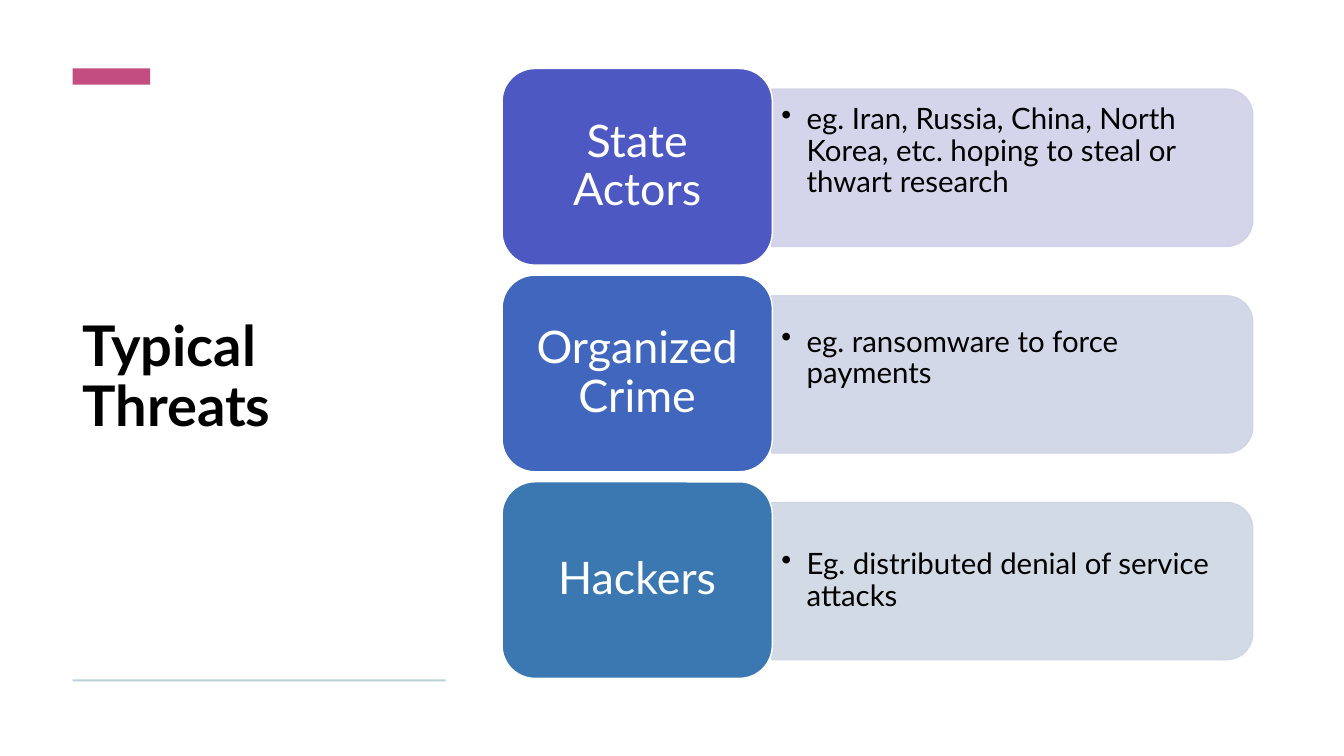
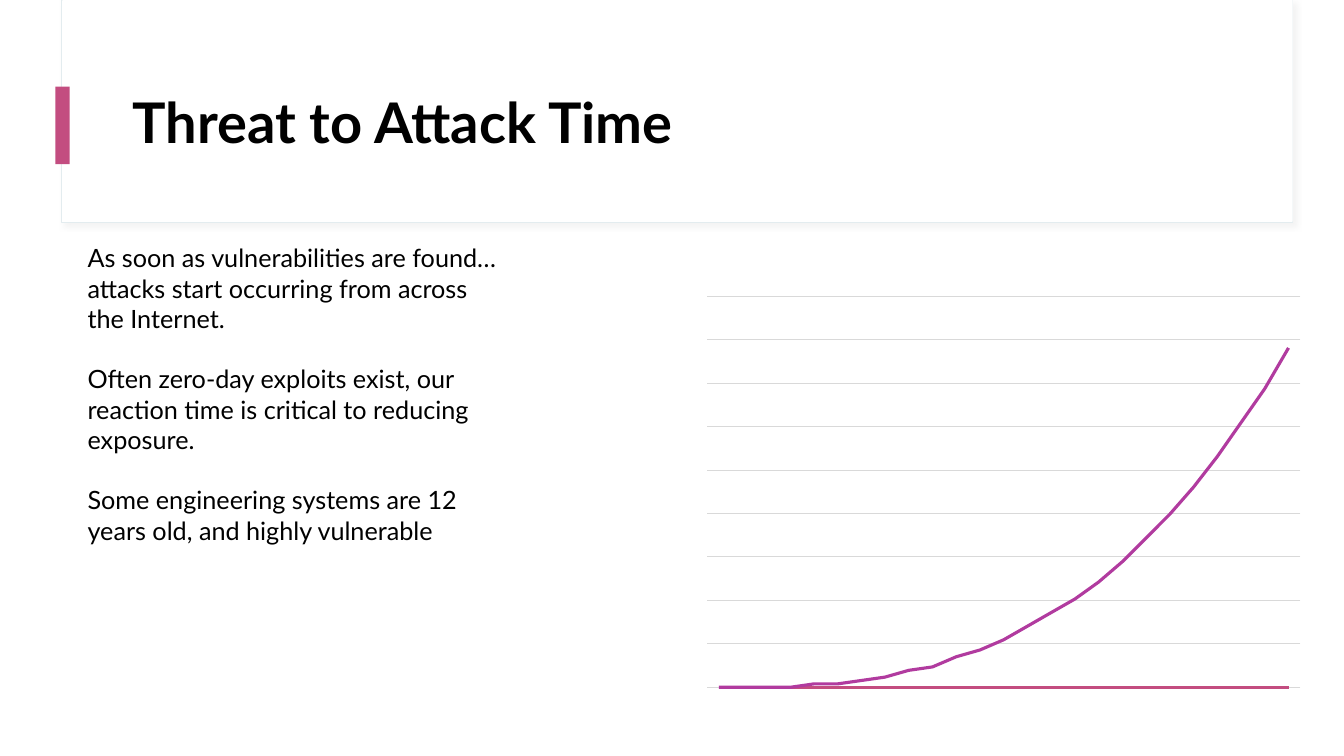
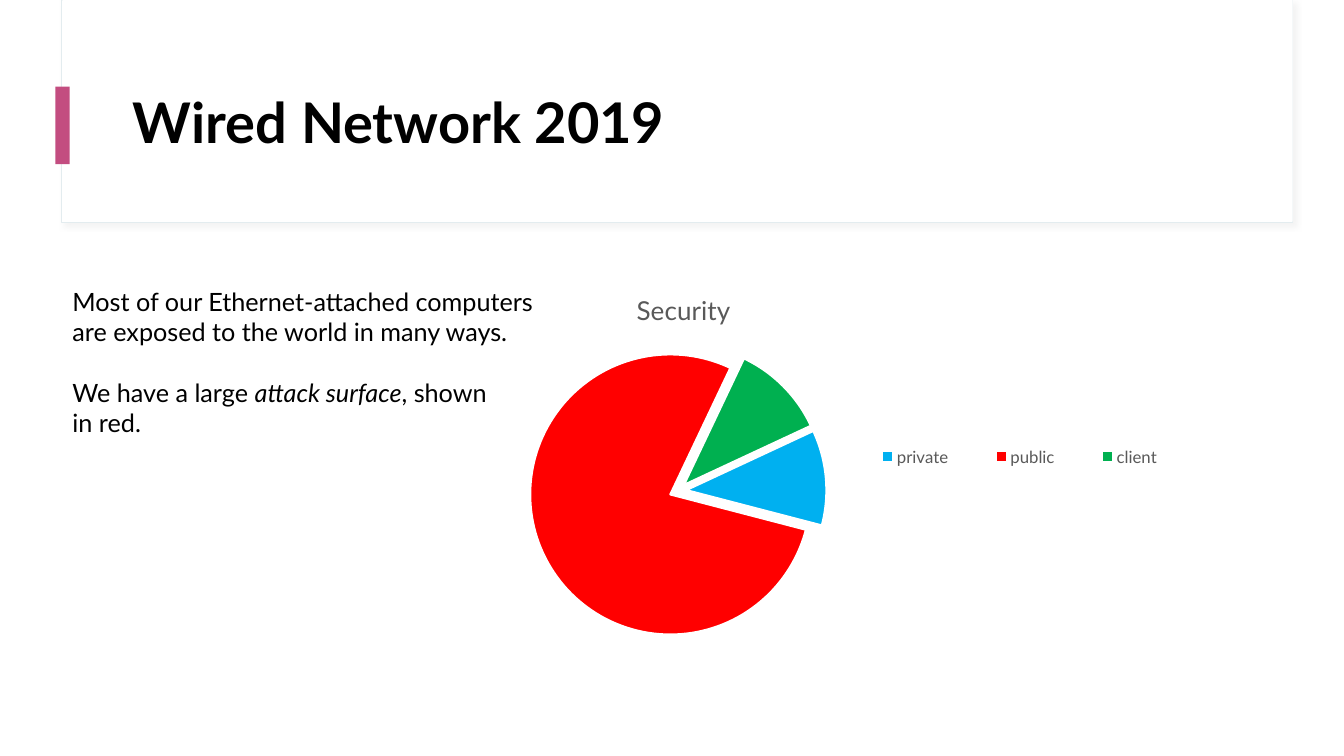
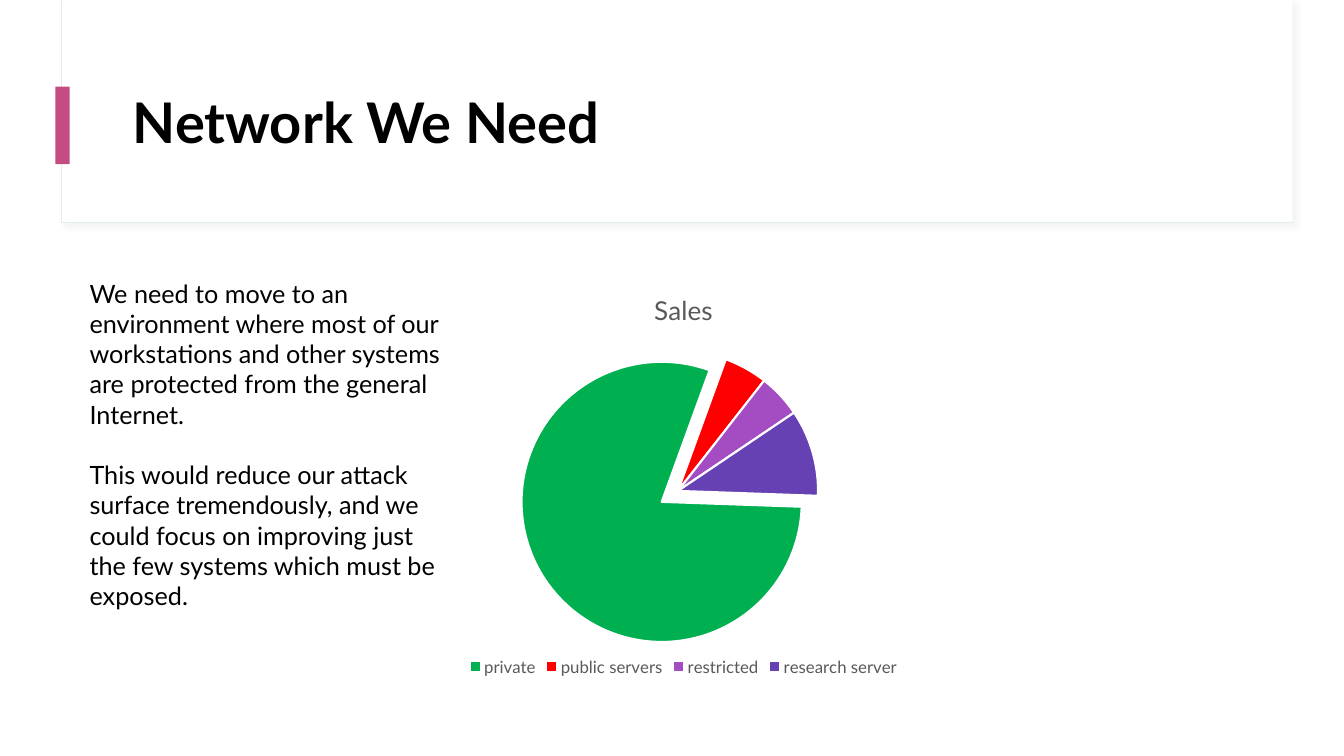
"""Build a four-slide deck on network threats and attack surface."""
from lxml import etree
from pptx import Presentation
from pptx.chart.data import CategoryChartData
from pptx.dml.color import RGBColor
from pptx.enum.chart import XL_CHART_TYPE, XL_LEGEND_POSITION
from pptx.enum.shapes import MSO_SHAPE
from pptx.enum.text import MSO_ANCHOR, PP_ALIGN
from pptx.oxml import parse_xml
from pptx.oxml.ns import nsdecls, qn
from pptx.util import Pt

RECT = MSO_SHAPE.RECTANGLE
ROUND = MSO_SHAPE.ROUNDED_RECTANGLE
ROUND_TOP = MSO_SHAPE.ROUND_2_SAME_RECTANGLE
LINE, PIE = XL_CHART_TYPE.LINE, XL_CHART_TYPE.PIE
BOTTOM = XL_LEGEND_POSITION.BOTTOM
TOP, MIDDLE = MSO_ANCHOR.TOP, MSO_ANCHOR.MIDDLE
LEFT, CENTER = PP_ALIGN.LEFT, PP_ALIGN.CENTER

PX = 9144
FONT = "Lato"
C = {
    "white": "FFFFFF", "black": "000000", "grey": "595959", "grid": "D9D9D9",
    "pink": "C34D80", "magenta": "B13B9F", "rule": "B9D1D8", "frame": "E3ECEF",
    "blue": "00B0F0", "red": "FF0000", "green": "00B050",
    "orchid": "A44DC3", "indigo": "6641B4",
}

THREATS = [
    ("State Actors", "eg. Iran, Russia, China, North Korea, etc. hoping to steal or thwart research",
     "4D58C3", "D0D1E9", 36),
    ("Organized Crime", "eg. ransomware to force payments", "4066BE", "CFD4E7", 36),
    ("Hackers", "Eg. distributed denial of service attacks", "3B78B1", "CED6E4", 4),
]
ROW_TOP, ROW_STEP, ROW_H = 68, 205, 195
NAME_X, NAME_W = 498, 268
BAND_W, BAND_H = 477, 156

DAYS = range(1, 26)
GROWTH = [
    ("Series 1", [0 for n in DAYS], "pink"),
    ("Series 2", [round(100 * (n / 25) ** 3) for n in DAYS], "magenta"),
]
ATTACK_TEXT = [
    "As soon as vulnerabilities are found…\nattacks start occurring from across\nthe Internet.",
    "Often zero-day exploits exist, our\nreaction time is critical to reducing\nexposure.",
    "Some engineering systems are 12\nyears old, and highly vulnerable",
]

PIE_BOX = (122, 271, 1112, 404)
PIE_LAYOUT = (0.37, 0.19, 0.25, 0.69)
PIE_SLIDES = [
    dict(title="Wired Network 2019", box=(62, 279, 512, 162), chart="Security",
         series="Series 1", start=65, legend=(0.64, 0.4, 0.32, 0.1),
         text=["Most of our Ethernet-attached computers\nare exposed to the world in many ways.",
               [("We have a large ", False), ("attack surface", True), (", shown\nin red.", False)]],
         slices=[("private", 11, "blue", 6), ("public", 78, "red", 6), ("client", 11, "green", 6)]),
    dict(title="Network We Need", box=(79, 271, 368, 343), chart="Sales",
         series="Sales", start=92, legend=None,
         text=["We need to move to an environment where most of our workstations and other "
               "systems are protected from the general Internet.",
               "This would reduce our attack surface tremendously, and we could focus on "
               "improving just the few systems which must be exposed."],
         slices=[("private", 80, "green", 14), ("public servers", 5, "red", 0),
                 ("restricted", 5, "orchid", 0), ("research server", 10, "indigo", 0)]),
]


def rgb(name):
    return RGBColor.from_string(C.get(name, name))


def emu(box):
    return [v * PX for v in box]


def write(tf, paras, size=18, color="black", bold=False, align=LEFT, spacing=None,
          gap=0, bullet=False):
    for i, para in enumerate(paras):
        p = tf.paragraphs[0] if i == 0 else tf.add_paragraph()
        if bullet:
            pPr = p._p.get_or_add_pPr()
            pPr.set("marL", str(25 * PX))
            pPr.set("indent", str(-25 * PX))
            etree.SubElement(pPr, qn("a:buChar")).set("char", "•")
        p.alignment = align
        if spacing:
            p.line_spacing = spacing
        if i and gap:
            p.space_before = Pt(gap)
        for text, italic in [(para, False)] if isinstance(para, str) else para:
            for j, line in enumerate(text.split("\n")):
                if j:
                    p.add_line_break()
                r = p.add_run()
                r.text = line
                f = r.font
                f.name, f.size, f.bold, f.italic = FONT, Pt(size), bold, italic
                f.color.rgb = rgb(color)


def frame(tf, anchor=TOP, inset=(10, 5, 10, 5)):
    tf.word_wrap = True
    tf.vertical_anchor = anchor
    tf.margin_left, tf.margin_top, tf.margin_right, tf.margin_bottom = emu(inset)
    return tf


def add_text(s, box, paras, anchor=TOP, inset=(10, 5, 10, 5), **fmt):
    write(frame(s.shapes.add_textbox(*emu(box)).text_frame, anchor, inset), paras, **fmt)


def add_box(s, box, fill, kind=RECT, line=None, width=1):
    sp = s.shapes.add_shape(kind, *emu(box))
    sp.shadow.inherit = False
    sp.fill.solid()
    sp.fill.fore_color.rgb = rgb(fill)
    if line:
        sp.line.color.rgb = rgb(line)
        sp.line.width = Pt(width)
    else:
        sp.line.fill.background()
    return sp


def add_title(s, box, title):
    add_text(s, box, [title], anchor=MIDDLE, size=40, bold=True, spacing=0.9)


def add_header(s, title):
    sp = add_box(s, (61, 0, 1221, 221), "white", line="frame", width=0.75)
    effects = sp.element.spPr.find(qn("a:effectLst"))
    effects.append(parse_xml(
        f'<a:outerShdw {nsdecls("a")} blurRad="{Pt(4)}" dist="{Pt(3)}" dir="2700000">'
        f'<a:srgbClr val="{C["grid"]}"><a:alpha val="30000"/></a:srgbClr></a:outerShdw>'))
    add_box(s, (62, 0, 1220, 220), "white")
    add_box(s, (55, 86, 14, 77), "pink")
    add_title(s, (122, 60, 1112, 129), title)


def add_chart(s, kind, box, cats, series):
    data = CategoryChartData()
    data.categories = cats
    for name, vals in series:
        data.add_series(name, vals)
    chart = s.shapes.add_chart(kind, *emu(box), data).chart
    chart.font.name, chart.font.size = FONT, Pt(10)
    chart.font.color.rgb = rgb("black")
    chart.has_legend = chart.has_title = False
    chart.plots[0].vary_by_categories = False
    return chart


def set_layout(parent, index, layout, inner=False):
    for old in parent.findall(qn("c:layout")):
        parent.remove(old)
    target = '<c:layoutTarget val="inner"/>' if inner else ""
    modes = "".join(f'<c:{k}Mode val="edge"/>' for k in "xy")
    sizes = "".join(f'<c:{k} val="{v}"/>' for k, v in zip("xywh", layout))
    parent.insert(index, parse_xml(
        f'<c:layout {nsdecls("c")}><c:manualLayout>{target}{modes}{sizes}'
        '</c:manualLayout></c:layout>'))


def threats_slide(s):
    add_title(s, (72, 105, 370, 541), "Typical Threats")
    add_box(s, (72, 68, 77, 16), "pink")
    add_box(s, (72, 674, 370, 2), "rule")
    band_x = NAME_X + NAME_W
    for i, (name, example, fill, tint, below) in enumerate(THREATS):
        top = ROW_TOP + i * ROW_STEP
        middle = top + ROW_H // 2 + 1
        band = add_box(s, (band_x + (BAND_W - BAND_H) // 2, middle - BAND_W // 2, BAND_H, BAND_W),
                       tint, ROUND_TOP, line=tint)
        band.rotation = 90
        for clr in band.element.spPr.iter(qn("a:srgbClr")):
            etree.SubElement(clr, qn("a:alpha")).set("val", "90000")
        add_text(s, (band_x, middle - 70, 469, 141), [example], MIDDLE, (9, 4, 9, below),
                 size=21, spacing=0.9, bullet=True)
        sp = add_box(s, (NAME_X, top, NAME_W, ROW_H), fill, ROUND, line="white")
        write(frame(sp.text_frame, MIDDLE, (13, 7, 13, 7)), [name], size=32, color="white",
              align=CENTER, spacing=0.9)


def growth_slide(s):
    add_header(s, "Threat to Attack Time")
    chart = add_chart(s, LINE, (689, 286, 613, 404), [str(n) for n in DAYS],
                      [(name, vals) for name, vals, _ in GROWTH])
    for ser, (_, _, color) in zip(chart.plots[0].series, GROWTH):
        ser.smooth = False
        ser.format.line.color.rgb = rgb(color)
        ser.format.line.width = Pt(2.25)
    axis = chart.value_axis
    axis.minimum_scale, axis.maximum_scale, axis.major_unit = 0, 115.2, 12.8
    axis.has_major_gridlines = True
    grid = axis.major_gridlines.format.line
    grid.color.rgb, grid.width = rgb("grid"), Pt(0.75)
    axis.visible = chart.category_axis.visible = False
    add_text(s, (77, 236, 458, 313), ATTACK_TEXT, gap=21.6)


def pie_slide(s, spec_):
    add_header(s, spec_["title"])
    names, vals, colors, offsets = zip(*spec_["slices"])
    chart = add_chart(s, PIE, PIE_BOX, names, [(spec_["series"], vals)])
    chart.has_title = True
    write(chart.chart_title.text_frame, [spec_["chart"]], size=18.6, color="grey", align=CENTER)
    plot = chart.plots[0]
    for i, (color, offset) in enumerate(zip(colors, offsets)):
        fmt = plot.series[0].points[i].format
        fmt.fill.solid()
        fmt.fill.fore_color.rgb = rgb(color)
        fmt.line.color.rgb, fmt.line.width = rgb("white"), Pt(1.5)
    root = chart.element
    for dPt, offset in zip(root.iter(qn("c:dPt")), offsets):
        dPt.find(qn("c:spPr")).addprevious(
            parse_xml(f'<c:explosion {nsdecls("c")} val="{offset}"/>'))
    pie = next(root.iter(qn("c:pieChart")))
    etree.SubElement(pie, qn("c:firstSliceAng")).set("val", str(spec_["start"]))
    set_layout(next(root.iter(qn("c:plotArea"))), 0, PIE_LAYOUT, inner=True)
    chart.has_legend = True
    legend = chart.legend
    legend.position, legend.include_in_layout = BOTTOM, False
    legend.font.name, legend.font.size = FONT, Pt(12)
    legend.font.color.rgb = rgb("grey")
    if spec_["legend"]:
        set_layout(next(root.iter(qn("c:legend"))), 1, spec_["legend"])
    add_text(s, spec_["box"], spec_["text"], gap=21.6)


def main():
    prs = Presentation()
    prs.slide_width, prs.slide_height = emu((1333, 750))
    blank = prs.slide_layouts[6]
    threats_slide(prs.slides.add_slide(blank))
    growth_slide(prs.slides.add_slide(blank))
    for pie in PIE_SLIDES:
        pie_slide(prs.slides.add_slide(blank), pie)
    prs.save("out.pptx")


if __name__ == "__main__":
    main()
